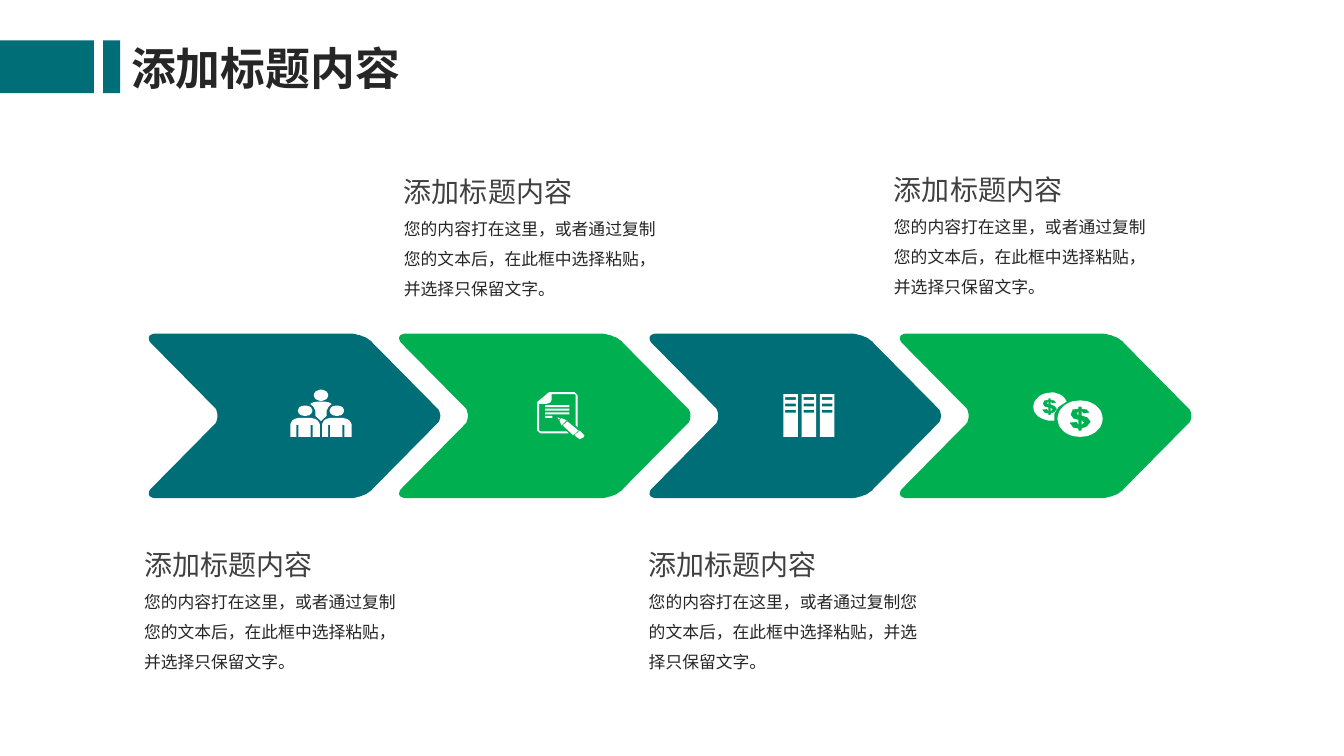
from dataclasses import dataclass

import lxml.etree
import pptx
import pptx.dml.color
import pptx.enum.shapes
import pptx.enum.text
import pptx.oxml.ns
import pptx.util
from math import cos, pi, sin

Cm = pptx.util.Cm
Pt = pptx.util.Pt
RGBColor = pptx.dml.color.RGBColor
Point = tuple[float, float]
Contour = list[Point]

TEAL = RGBColor(0x00, 0x6E, 0x77)
GREEN = RGBColor(0x00, 0xB0, 0x50)
WHITE = RGBColor(0xFF, 0xFF, 0xFF)
DARK = RGBColor(0x26, 0x26, 0x26)
GREY = RGBColor(0x40, 0x40, 0x40)
CJK_FONT = "Noto Sans CJK JP"
HEADING = "添加标题内容"
BODY = "您的内容打在这里，或者通过复制您的文本后，在此框中选择粘贴，并选择只保留文字。"

CHEVRON_LEFT, CHEVRON_STEP, CHEVRON_MIDDLE = 3.7, 6.31, 10.48
CAPTION_HEIGHT = 3.84


@dataclass
class Stage:
    color: RGBColor
    icon: list[Contour]
    icon_left: float
    icon_top: float
    caption_left: float
    caption_top: float
    caption_width: float = 7.04


def cubic(start: Point, first: Point, second: Point, end: Point, steps: int = 10) -> Contour:
    """Points along a cubic Bézier curve."""
    points = []
    for step in range(steps + 1):
        t = step / steps
        weights = ((1 - t) ** 3, 3 * t * (1 - t) ** 2, 3 * t * t * (1 - t), t ** 3)
        controls = (start, first, second, end)
        points.append((sum(w * c[0] for w, c in zip(weights, controls)),
                       sum(w * c[1] for w, c in zip(weights, controls))))
    return points


def ellipse(x: float, y: float, radius_x: float, radius_y: float) -> Contour:
    angles = [2 * pi * step / 40 for step in range(40)]
    return [(x + radius_x * cos(a), y + radius_y * sin(a)) for a in angles]


def rectangle(x: float, y: float, width: float, height: float) -> Contour:
    return [(x, y), (x + width, y), (x + width, y + height), (x, y + height)]


def placed(contour: Contour, x: float, y: float, scale: float = 1) -> Contour:
    return [(x + px * scale, y + py * scale) for px, py in contour]


def chevron() -> Contour:
    """Rounded chevron, vertically centred on zero."""
    tip = cubic((7.32, -0.19), (7.42, -0.1), (7.42, 0.1), (7.32, 0.19))
    notch = cubic((1.73, 0.19), (1.8, 0.1), (1.8, -0.1), (1.73, -0.19))
    lower = (cubic((5.69, 1.84), (5.59, 1.97), (5.33, 2.07), (5.13, 2.07))
             + cubic((0.23, 2.07), (0.05, 2.07), (0, 1.97), (0.1, 1.84)))
    upper = [(x, -y) for x, y in reversed(lower)]
    return tip + lower + notch + upper


def people_icon() -> list[Contour]:
    center = 0.77
    half = [(0.91, 0.66), (0.91, 0.53), (0.96, 0.43), (1.04, 0.36), (0.97, 0.32), (0.86, 0.3)]
    back_body = [(center, 0.79)] + half + [(2 * center - x, y) for x, y in reversed(half)]
    front_body = (cubic((0, 0.91), (0, 0.78), (0.1, 0.71), (0.25, 0.71))
                  + cubic((0.46, 0.71), (0.62, 0.71), (0.74, 0.78), (0.74, 0.91))
                  + [(0.74, 1.19), (0.56, 1.19), (0.56, 0.89), (0.51, 0.89), (0.51, 1.19),
                     (0.2, 1.19), (0.2, 0.89), (0.15, 0.89), (0.15, 1.19), (0, 1.19)])
    contours = [ellipse(center, 0.14, 0.18, 0.14), back_body]
    for offset in (0, 0.8):
        contours += [ellipse(0.37 + offset, 0.53, 0.18, 0.13), placed(front_body, offset, 0)]
    return contours


def note_icon() -> list[Contour]:
    page = [(0.05, 0.3), (0.23, 0.3), (0.33, 0.26), (0.36, 0.2), (0.36, 0.05), (0.94, 0.05),
            (0.97, 0.08), (0.97, 0.84), (1.02, 0.89), (1.02, 0.08), (0.94, 0), (0.3, 0),
            (0, 0.25), (0, 0.97), (0.08, 1.04), (0.79, 1.04), (0.74, 0.99), (0.08, 0.99),
            (0.05, 0.97)]
    lines = [rectangle(0.2, 0.33 + 0.09 * row, width, 0.05)
             for row, width in enumerate((0.61, 0.61, 0.61, 0.18))]
    pencil = [
        [(0.51, 0.64), (0.58, 0.66), (0.53, 0.69)],
        [(0.61, 0.66), (0.74, 0.71), (0.61, 0.84), (0.56, 0.71)],
        [(0.76, 0.74), (1.04, 0.97), (0.91, 1.09), (0.64, 0.84)],
        [(1.07, 0.97), (1.19, 1.09), (1.17, 1.14), (1.07, 1.19), (0.94, 1.09)],
    ]
    return [page] + lines + pencil


def binders_icon() -> list[Contour]:
    contours = []
    for x in (0, 0.46, 0.92):
        contours.append(rectangle(x, 0, 0.37, 1.08))
        contours += [rectangle(x + 0.05, 0.08 + 0.16 * row, 0.27, 0.07) for row in range(3)]
    return contours


def coins_icon() -> list[Contour]:
    dollar = [
        [(0.24, -0.15), (0.09, -0.13), (0.04, -0.18), (0.04, -0.08), (0.19, -0.03),
         (0.27, 0.08), (0.17, 0.2), (0.04, 0.25), (0.04, 0.3), (-0.04, 0.3), (-0.04, 0.25),
         (-0.17, 0.23), (-0.27, 0.1), (-0.09, 0.08), (-0.04, 0.15), (-0.04, 0.03),
         (-0.17, 0), (-0.24, -0.1), (-0.19, -0.23), (-0.04, -0.25), (-0.04, -0.3),
         (0.04, -0.3), (0.04, -0.25), (0.17, -0.23)],
        [(0.04, 0.15), (0.1, 0.1), (0.04, 0.05)],
        [(-0.04, -0.18), (-0.08, -0.13), (-0.04, -0.08)],
    ]
    back_coin = (cubic((0.84, 0.23), (0.79, 0.1), (0.64, 0), (0.46, 0))
                 + cubic((0.46, 0), (0.2, 0), (0, 0.18), (0, 0.36))
                 + cubic((0, 0.36), (0, 0.56), (0.2, 0.71), (0.46, 0.71))
                 + [(0.53, 0.71), (0.53, 0.53), (0.64, 0.36)])
    contours = [ellipse(1.18, 0.66, 0.57, 0.46), back_coin]
    for x, y, scale in ((1.18, 0.66, 1), (0.41, 0.36, 0.7)):
        contours += [placed(part, x, y, scale) for part in dollar]
    return contours


def paint(shape, color: RGBColor) -> None:
    shape.shadow.inherit = False
    shape.fill.solid()
    shape.fill.fore_color.rgb = color
    shape.line.fill.background()


def draw_contours(shapes, contours: list[Contour], left: float, top: float, color: RGBColor) -> None:
    """Draw closed contours, given in centimetres, as one shape."""
    grids = [[(round(x * 100), round(y * 100)) for x, y in placed(contour, left, top)]
             for contour in contours]
    builder = shapes.build_freeform(*grids[0][0], scale=Cm(0.01))
    for index, grid in enumerate(grids):
        if index:
            builder.move_to(*grid[0])
        builder.add_line_segments(grid[1:], close=True)
    paint(builder.convert_to_shape(), color)


def format_run(run, size: int, color: RGBColor, font: str, bold: bool = False) -> None:
    run.font.size = Pt(size)
    run.font.bold = bold
    run.font.color.rgb = color
    run.font.name = font
    if font == CJK_FONT:
        properties = run.font._element
        lxml.etree.SubElement(properties, pptx.oxml.ns.qn("a:ea"), typeface=font)


def add_title(slide) -> None:
    title = slide.shapes.title
    title.left, title.top, title.width, title.height = Cm(3.05), Cm(0.89), Cm(7.29), Cm(1.63)
    frame = title.text_frame
    frame.text = HEADING
    frame.word_wrap = False
    frame.auto_size = pptx.enum.text.MSO_AUTO_SIZE.NONE
    frame.vertical_anchor = pptx.enum.text.MSO_ANCHOR.MIDDLE
    frame.paragraphs[0].alignment = pptx.enum.text.PP_ALIGN.LEFT
    format_run(frame.paragraphs[0].runs[0], 32, DARK, CJK_FONT, bold=True)


def add_caption(slide, stage: Stage) -> None:
    box = slide.shapes.add_textbox(Cm(stage.caption_left), Cm(stage.caption_top),
                                   Cm(stage.caption_width), Cm(CAPTION_HEIGHT))
    frame = box.text_frame
    frame.word_wrap = True
    frame.auto_size = pptx.enum.text.MSO_AUTO_SIZE.SHAPE_TO_FIT_TEXT
    frame.text = f"{HEADING}\n{BODY}"
    for paragraph in frame.paragraphs:
        paragraph.line_spacing = 1.5
    heading, body = frame.paragraphs
    format_run(heading.runs[0], 20, GREY, CJK_FONT)
    format_run(body.runs[0], 12, DARK, "Arial")


def main() -> None:
    presentation = pptx.Presentation()
    presentation.slide_width, presentation.slide_height = Cm(33.87), Cm(19.05)
    slide = presentation.slides.add_slide(presentation.slide_layouts[5])
    add_title(slide)
    for left, width in ((0, 2.37), (2.6, 0.43)):
        bar = slide.shapes.add_shape(pptx.enum.shapes.MSO_SHAPE.RECTANGLE,
                                     Cm(left), Cm(1.02), Cm(width), Cm(1.33))
        paint(bar, TEAL)

    stages = [
        Stage(TEAL, people_icon(), 7.32, 9.82, 3.38, 13.26),
        Stage(GREEN, note_icon(), 13.54, 9.88, 9.93, 3.86),
        Stage(TEAL, binders_icon(), 19.74, 9.93, 16.1, 13.26, 7.65),
        Stage(GREEN, coins_icon(), 26.04, 9.89, 22.28, 3.81),
    ]
    for index, stage in enumerate(stages):
        group = slide.shapes.add_group_shape()
        draw_contours(group.shapes, [chevron()], CHEVRON_LEFT + CHEVRON_STEP * index,
                      CHEVRON_MIDDLE, stage.color)
        draw_contours(group.shapes, stage.icon, stage.icon_left, stage.icon_top, WHITE)
        add_caption(slide, stage)
    presentation.save("out.pptx")


if __name__ == "__main__":
    main()
